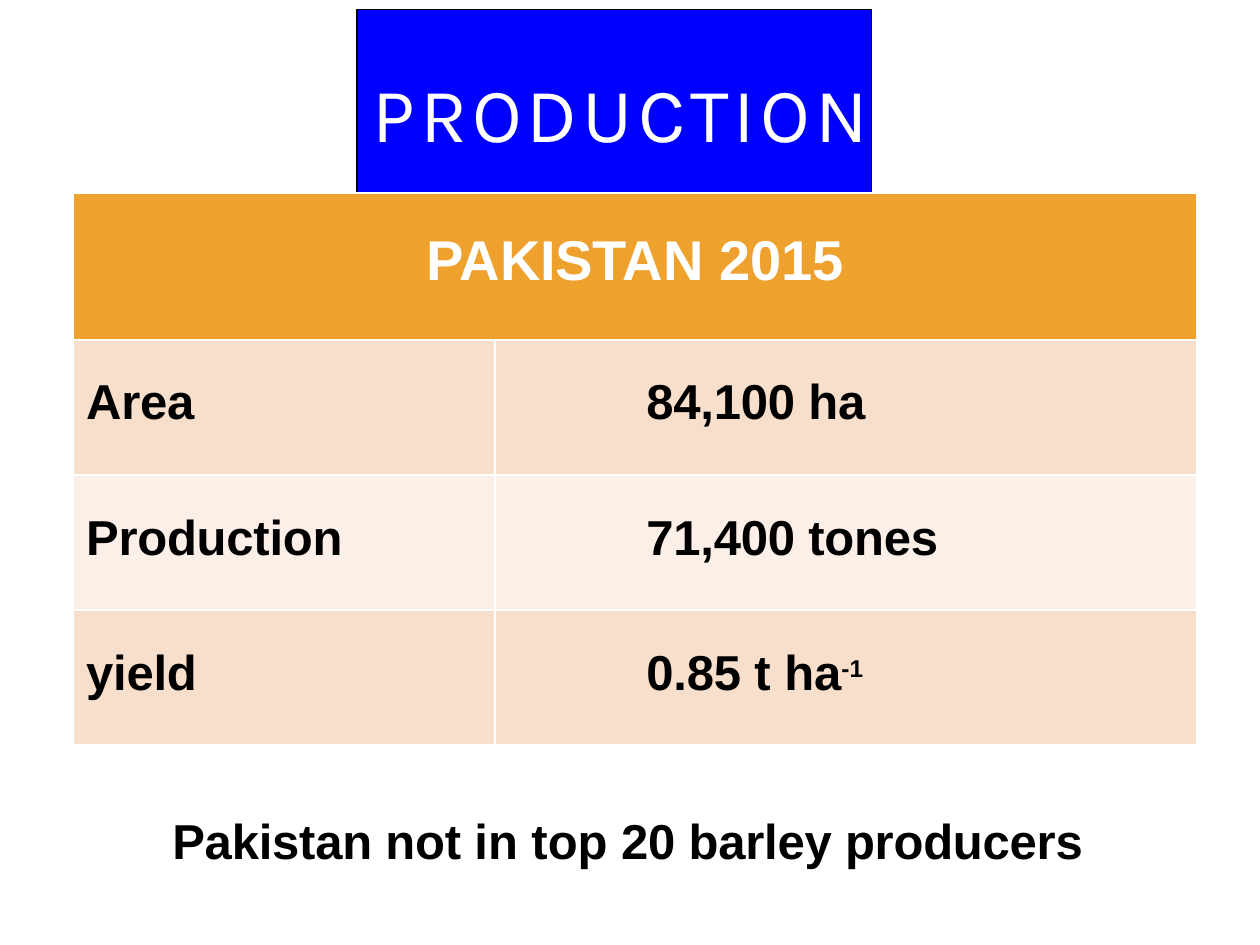
from dataclasses import dataclass

import pptx
import pptx.dml.color
import pptx.enum.shapes
import pptx.enum.text
import pptx.util

Pt = pptx.util.Pt
RGBColor = pptx.dml.color.RGBColor
PP_ALIGN = pptx.enum.text.PP_ALIGN
MSO_ANCHOR = pptx.enum.text.MSO_ANCHOR

WHITE = RGBColor(0xFF, 0xFF, 0xFF)
BLACK = RGBColor(0, 0, 0)
BLUE = RGBColor(0, 0, 0xFF)
ORANGE = RGBColor(0xEF, 0xA1, 0x2D)
PEACH = RGBColor(0xF8, 0xDF, 0xCC)
PALE_PEACH = RGBColor(0xFB, 0xEF, 0xE7)


@dataclass
class Run:
    text: str
    size: float = 28
    color: RGBColor = BLACK
    font: str = "Arial"
    bold: bool = True
    spacing: float = -0.1
    baseline: int = 0


@dataclass
class Row:
    label: str
    value: list[Run]
    fill: RGBColor


ROWS = [
    Row("Area", [Run("84,100 ha")], PEACH),
    Row("Production", [Run("71,400 tones")], PALE_PEACH),
    Row("yield", [Run("0.85 "), Run("t ha", spacing=0),
                  Run("-1", size=24, spacing=0, baseline=30)], PEACH),
]


def add_runs(p, runs: list[Run], align=PP_ALIGN.LEFT, indent: float = 0) -> None:
    p.alignment = align
    pPr = p._p.get_or_add_pPr()
    pPr.set("marL", str(Pt(indent)))
    pPr.set("indent", "0")
    for run in runs:
        r = p.add_run()
        r.text = run.text
        r.font.size = Pt(run.size)
        r.font.name = run.font
        r.font.bold = run.bold
        r.font.color.rgb = run.color
        rPr = r._r.get_or_add_rPr()
        rPr.set("spc", str(round(run.spacing * 100)))
        if run.baseline:
            rPr.set("baseline", str(run.baseline * 1000))


def set_margins(box, top: float) -> None:
    box.margin_left = box.margin_right = box.margin_bottom = 0
    box.margin_top = Pt(top)


def fill_cell(cell, runs: list[Run], color: RGBColor, top: float = 20.4,
              align=PP_ALIGN.LEFT, indent: float = 0) -> None:
    cell.fill.solid()
    cell.fill.fore_color.rgb = color
    cell.vertical_anchor = MSO_ANCHOR.TOP
    set_margins(cell, top)
    add_runs(cell.text_frame.paragraphs[0], runs, align, indent)


def add_title(s) -> None:
    sp = s.shapes.add_shape(pptx.enum.shapes.MSO_SHAPE.RECTANGLE,
                            Pt(204), Pt(5.5), Pt(294), Pt(108))
    sp.shadow.inherit = False
    sp.fill.solid()
    sp.fill.fore_color.rgb = BLUE
    sp.line.color.rgb = BLACK
    sp.line.width = Pt(0.75)
    tf = sp.text_frame
    tf.word_wrap = True
    tf.vertical_anchor = MSO_ANCHOR.MIDDLE
    set_margins(tf, 9)
    title = Run("PRODUCTION", 44, WHITE, "Karla", False, 2.9)
    add_runs(tf.paragraphs[0], [title], PP_ALIGN.CENTER, 7.2)


def add_production_table(s) -> None:
    tbl = s.shapes.add_table(len(ROWS) + 1, 2, Pt(42), Pt(110.3),
                             Pt(642), Pt(315.5)).table
    tbl.columns[0].width, tbl.columns[1].width = Pt(241), Pt(401)
    tbl.rows[0].height = Pt(84)
    header = tbl.cell(0, 0)
    header.merge(tbl.cell(0, 1))
    fill_cell(header, [Run("PAKISTAN ", 32, WHITE),
                       Run("2015", 32, WHITE, spacing=0)],
              ORANGE, 21.2, PP_ALIGN.CENTER)
    for i, row in enumerate(ROWS, start=1):
        tbl.rows[i].height = Pt(77.2)
        fill_cell(tbl.cell(i, 0), [Run(row.label)], row.fill, indent=7.2)
        fill_cell(tbl.cell(i, 1), row.value, row.fill, indent=86.4)


def add_footnote(s) -> None:
    tf = s.shapes.add_textbox(Pt(97.5), Pt(458.6), Pt(525.5), Pt(37)).text_frame
    tf.word_wrap = True
    set_margins(tf, 4.5)
    add_runs(tf.paragraphs[0], [Run("Pakistan not "), Run("in top ", spacing=0),
                                Run("20 barley producers")], indent=1)


def main() -> None:
    prs = pptx.Presentation()
    prs.slide_width, prs.slide_height = Pt(720), Pt(540)
    s = prs.slides.add_slide(prs.slide_layouts[6])
    add_title(s)
    add_production_table(s)
    add_footnote(s)
    prs.save("out.pptx")


if __name__ == "__main__":
    main()
